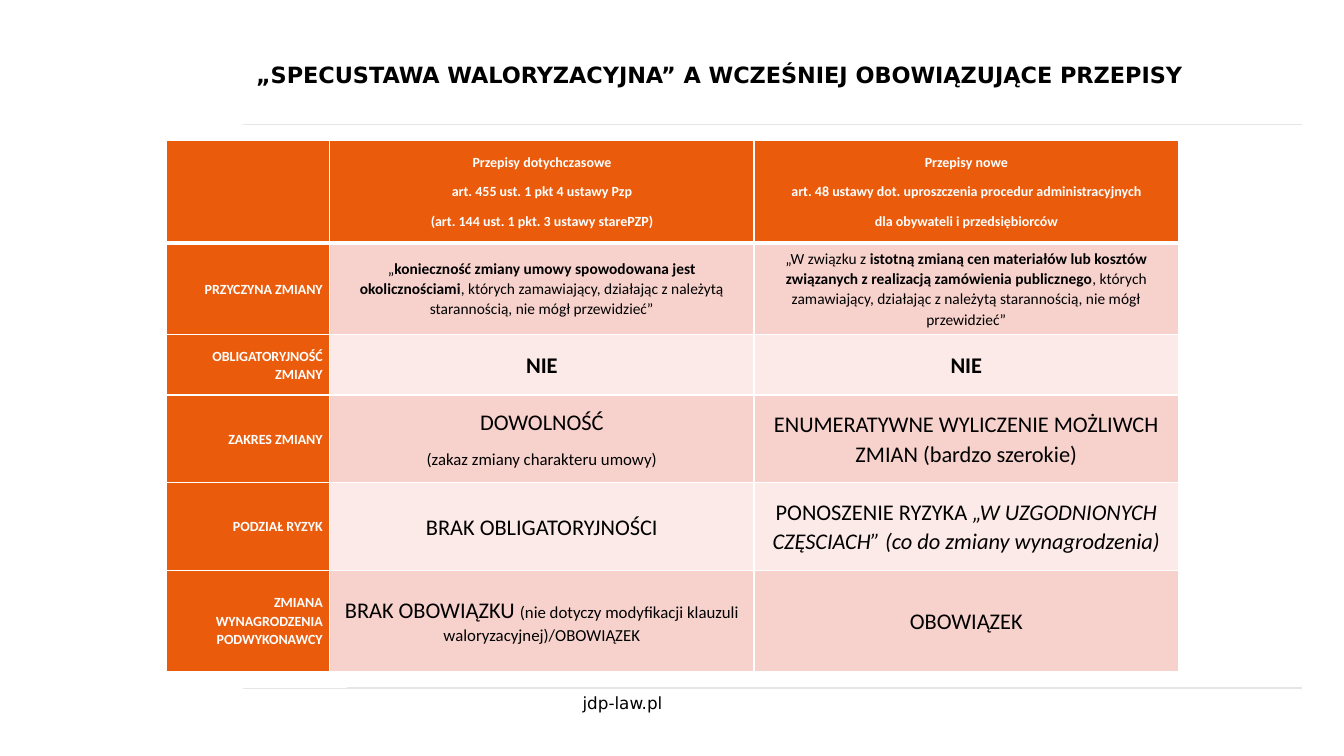
from dataclasses import dataclass

from lxml import etree
from pptx import Presentation
from pptx.dml.color import RGBColor
from pptx.enum.shapes import MSO_CONNECTOR
from pptx.enum.text import MSO_ANCHOR, PP_ALIGN
from pptx.oxml.ns import qn
from pptx.util import Inches, Pt

LEFT, MID, RIGHT = PP_ALIGN.LEFT, PP_ALIGN.CENTER, PP_ALIGN.RIGHT
FULL = PP_ALIGN.JUSTIFY
TOP, CENTER = MSO_ANCHOR.TOP, MSO_ANCHOR.MIDDLE
STRAIGHT = MSO_CONNECTOR.STRAIGHT
WIDE, TALL = Inches(13.33), Inches(7.5)


@dataclass(frozen=True)
class Theme:
    head: str = "DejaVu Sans"
    body: str = "Calibri"
    ink: str = "000000"
    white: str = "FFFFFF"
    rule: str = "E6E6E6"
    brand: str = "EA5B0C"
    dark: str = "F7D2CC"
    pale: str = "FBEAE7"
    big: int = 16
    note: int = 12
    text: int = 11
    label: int = 10


THEME = Theme()
BOLD = {"bold": True}
NOTE = {"size": THEME.note}

COLS = [12.15, 31.58, 31.58]
ROWS = [13.6, 12.13, 8, 11.6, 11.6, 13.33]

HEADS = [
    [],
    ["Przepisy dotychczasowe", "art. 455 ust. 1 pkt 4 ustawy Pzp",
     "(art. 144 ust. 1 pkt. 3 ustawy starePZP)"],
    ["Przepisy nowe",
     "art. 48 ustawy dot. uproszczenia procedur administracyjnych",
     "dla obywateli i przedsiębiorców"],
]

BODY = [
    ("PRZYCZYNA ZMIANY", {"size": THEME.text},
     [[("„", {}),
       ("konieczność zmiany umowy spowodowana jest okolicznościami", BOLD),
       (", których zamawiający, działając z należytą starannością, "
        "nie mógł przewidzieć”", {})]],
     [[("„W związku z ", {}),
       ("istotną zmianą cen materiałów lub kosztów związanych z realizacją "
        "zamówienia publicznego", BOLD),
       (", których zamawiający, działając z należytą starannością, "
        "nie mógł przewidzieć”", {})]]),
    ("OBLIGATORYJNOŚĆ ZMIANY", BOLD, ["NIE"], ["NIE"]),
    ("ZAKRES ZMIANY", {},
     ["DOWOLNOŚĆ", [("(zakaz zmiany charakteru umowy)", NOTE)]],
     ["ENUMERATYWNE WYLICZENIE MOŻLIWCH ZMIAN (bardzo szerokie)"]),
    ("PODZIAŁ RYZYK", {},
     ["BRAK OBLIGATORYJNOŚCI"],
     [[("PONOSZENIE RYZYKA ", {}),
       ("„W UZGODNIONYCH CZĘSCIACH” (co do zmiany wynagrodzenia)",
        {"italic": True})]]),
    ("ZMIANA WYNAGRODZENIA PODWYKONAWCY", {},
     [[("BRAK OBOWIĄZKU ", {}),
       ("(nie dotyczy modyfikacji klauzuli waloryzacyjnej)/OBOWIĄZEK", NOTE)]],
     ["OBOWIĄZEK"]),
]


def across(share):
    return round(WIDE * share / 100)


def down(share):
    return round(TALL * share / 100)


def write(frame, paras, face=THEME.body, size=THEME.big, color=THEME.ink,
          bold=False, italic=False, align=LEFT, line=1.0, after=0):
    for num, para in enumerate(paras):
        item = frame.add_paragraph() if num else frame.paragraphs[0]
        item.alignment = align
        item.line_spacing = line
        item.space_before, item.space_after = Pt(0), Pt(after)
        runs = [(para, {})] if isinstance(para, str) else para
        for words, own in runs:
            run = item.add_run()
            run.text = words
            font = run.font
            font.name = face
            font.size = Pt(own.get("size", size))
            font.bold = own.get("bold", bold)
            font.italic = own.get("italic", italic)
            font.color.rgb = RGBColor.from_string(color)


def rule(slide, start, height):
    line = slide.shapes.add_connector(
        STRAIGHT, across(start), down(height), across(96.85), down(height))
    line.line.color.rgb = RGBColor.from_string(THEME.rule)
    line.line.width = Pt(0.5)
    etree.SubElement(line._element.spPr, qn("a:effectLst"))


def title(slide, words):
    shape = slide.shapes.title
    shape.left, shape.top = across(18.3), down(7.87)
    shape.width, shape.height = across(78.54), down(5.2)
    shape.text_frame.word_wrap = True
    shape.text_frame.vertical_anchor = TOP
    write(shape.text_frame, [words], face=THEME.head, bold=True,
          align=FULL, line=0.9)


def footer(slide, words):
    box = slide.shapes.add_textbox(
        across(42.61), down(90.93), across(17.25), down(4))
    box.text_frame.word_wrap = True
    write(box.text_frame, [words], face=THEME.head, size=THEME.note)


def border(cell, side, width):
    props = cell._tc.get_or_add_tcPr()
    line = etree.SubElement(props, qn(f"a:ln{side}"), w=str(Pt(width)))
    fill = etree.SubElement(line, qn("a:solidFill"))
    etree.SubElement(fill, qn("a:srgbClr"), val=THEME.white)


def fill(cell, paras, back, over=1, under=1, **form):
    for side, width in zip("LRTB", (1, 1, over, under)):
        border(cell, side, width)
    cell.fill.solid()
    cell.fill.fore_color.rgb = RGBColor.from_string(back)
    cell.margin_left = cell.margin_right = Inches(0.07)
    cell.margin_top = cell.margin_bottom = 0
    cell.vertical_anchor = CENTER
    write(cell.text_frame, paras, line=1.07, after=8, **form)


def matrix(slide):
    table = slide.shapes.add_table(
        len(ROWS), len(COLS), across(12.38), down(18.53),
        across(sum(COLS)), down(sum(ROWS))).table
    table.horz_banding = False
    for col, share in zip(table.columns, COLS):
        col.width = across(share)
    for row, share in zip(table.rows, ROWS):
        row.height = down(share)
    label = {"size": THEME.label, "color": THEME.white, "bold": True}
    for col, paras in enumerate(HEADS):
        fill(table.cell(0, col), paras, THEME.brand, under=3,
             align=MID, **label)
    for row, (name, form, *texts) in enumerate(BODY, 1):
        over = 3 if row == 1 else 1
        fill(table.cell(row, 0), [name], THEME.brand, over=over,
             align=RIGHT, **label)
        back = THEME.dark if row % 2 else THEME.pale
        for col, paras in enumerate(texts, 1):
            fill(table.cell(row, col), paras, back, over=over,
                 align=MID, **form)


def main():
    deck = Presentation()
    deck.slide_width, deck.slide_height = WIDE, TALL
    slide = deck.slides.add_slide(deck.slide_layouts[5])
    for start, height in ((18.08, 16.4), (25.81, 90.93), (18.08, 91.07)):
        rule(slide, start, height)
    footer(slide, "jdp-law.pl")
    title(slide, "„SPECUSTAWA WALORYZACYJNA” A WCZEŚNIEJ OBOWIĄZUJĄCE PRZEPISY")
    matrix(slide)
    deck.save("out.pptx")


if __name__ == "__main__":
    main()
